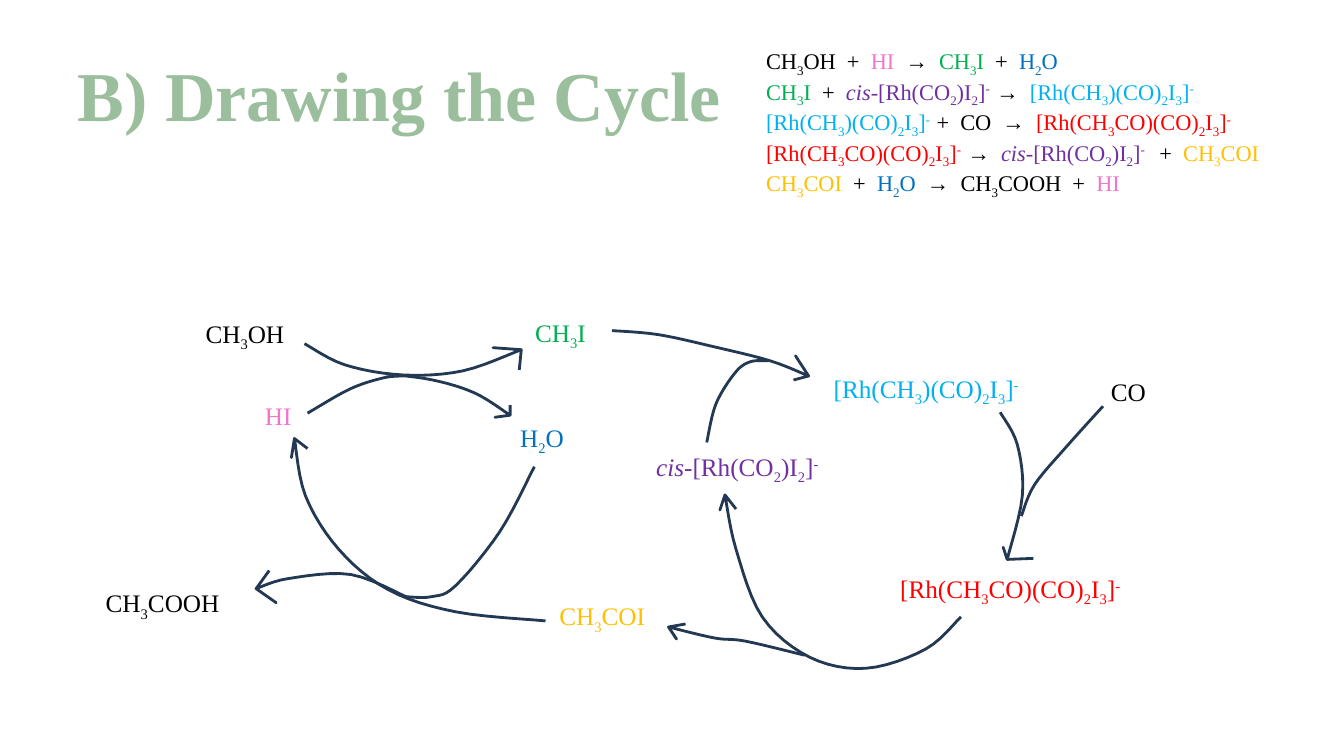
from dataclasses import dataclass

from pptx import Presentation
from pptx.dml.color import RGBColor
from pptx.enum.text import MSO_ANCHOR, MSO_AUTO_SIZE, PP_ALIGN
from pptx.util import Inches, Pt

MIDDLE = MSO_ANCHOR.MIDDLE
GROW = MSO_AUTO_SIZE.SHAPE_TO_FIT_TEXT
LEFT = PP_ALIGN.LEFT
FACE = "Times New Roman"
TITLE_ONLY = 5
PARTS = 6
COLORS = {
    "black": "000000", "pink": "F076CA", "green": "00B050", "blue": "0070C0",
    "purple": "7030A0", "sky": "00B0F0", "red": "FF0000", "gold": "FFC000",
    "sage": "9BBF9C", "navy": "233953",
}
BASES = {"_": "-25000", "^": "30000"}
Point = tuple[float, float]


@dataclass
class Species:
    color: str
    text: str


@dataclass
class Label:
    name: str
    left: float
    top: float
    width: float


@dataclass
class Stroke:
    curve: list[Point]
    barbs: tuple[Point, ...] = ()


SPECIES = {
    "CH3OH": Species("black", "CH|_3|OH"),
    "HI": Species("pink", "HI"),
    "CH3I": Species("green", "CH|_3|I"),
    "H2O": Species("blue", "H|_2|O"),
    "cis": Species("purple", "/cis|-[Rh(CO|_2|)I|_2|]|^-"),
    "methyl": Species("sky", "[Rh(CH|_3|)(CO)|_2|I|_3|]|^-"),
    "acyl": Species("red", "[Rh(CH|_3|CO)(CO)|_2|I|_3|]|^-"),
    "CH3COI": Species("gold", "CH|_3|COI"),
    "CH3COOH": Species("black", "CH|_3|COOH"),
    "CO": Species("black", "CO"),
}
STEPS = [
    ["CH3OH", "  +  ", "HI", "  →  ", "CH3I", "  +  ", "H2O"],
    ["CH3I", "  +  ", "cis", "^  |→  ", "methyl"],
    ["methyl", "^  |+  ", "CO", "  →  ", "acyl"],
    ["acyl", "^  |→  ", "cis", "^ |  +  ", "CH3COI"],
    ["CH3COI", "  +  ", "H2O", "  →  ", "CH3COOH", "  +  ", "HI"],
]
LABELS = [
    Label("CH3COOH", 0.95, 5.78, 1.5),
    Label("CH3OH", 1.94, 3.11, 1.17),
    Label("HI", 2.53, 3.92, 0.73),
    Label("CH3I", 5.21, 3.1, 1.17),
    Label("H2O", 5.06, 4.14, 0.75),
    Label("cis", 6.41, 4.43, 2.5),
    Label("methyl", 8.17, 3.65, 2.18),
    Label("CO", 10.92, 3.68, 0.58),
    Label("acyl", 8.83, 5.64, 2.67),
    Label("CH3COI", 5.45, 5.91, 1.17),
]
STROKES = [
    Stroke([(3.02, 3.41), (3.42, 3.62), (3.99, 3.72), (4.59, 3.68), (5.17, 3.47)],
           ((4.89, 3.45), (5.15, 3.67))),
    Stroke([(3.05, 4.1), (3.47, 3.86), (3.8, 3.75), (4, 3.73)]),
    Stroke([(3.83, 3.71), (4.29, 3.77), (4.71, 3.9), (5.06, 4.12)],
           ((4.91, 4.14), (5.06, 4.02))),
    Stroke([(6.07, 3.28), (6.53, 3.32), (7.08, 3.44), (7.64, 3.58), (8.02, 3.73)],
           ((7.89, 3.53), (7.87, 3.77))),
    Stroke([(7.01, 4.39), (7.1, 4.01), (7.29, 3.7), (7.44, 3.59), (7.62, 3.58)]),
    Stroke([(9.92, 4.09), (10.09, 4.41), (10.14, 4.92), (9.99, 5.55)],
           ((9.95, 5.43), (10.25, 5.54))),
    Stroke([(10.94, 4.03), (10.57, 4.44), (10.26, 4.81), (10.13, 5.12)]),
    Stroke([(9.53, 6.12), (9.18, 6.44), (8.59, 6.63), (8.03, 6.52), (7.56, 6.12),
            (7.3, 5.45), (7.19, 4.91)], ((7.14, 5.06), (7.3, 5.05))),
    Stroke([(7.98, 6.5), (7.39, 6.36), (7.09, 6.33), (6.63, 6.22)],
           ((6.71, 6.34), (6.8, 6.19))),
    Stroke([(5.41, 6.16), (4.52, 6.07), (3.85, 5.85), (3.36, 5.45), (3.03, 4.92),
            (2.92, 4.35)], ((2.89, 4.54), (3.05, 4.45))),
    Stroke([(5.3, 4.63), (4.96, 5.27), (4.52, 5.81), (4.28, 5.92), (4.02, 5.92)]),
    Stroke([(4.05, 5.93), (3.48, 5.7), (2.86, 5.74), (2.54, 5.84)],
           ((2.74, 5.98), (2.67, 5.66))),
]


def paint(color: str) -> RGBColor:
    return RGBColor.from_string(COLORS[color])


def style(font, color: str, **form) -> None:
    for key, value in {"name": FACE, **form}.items():
        setattr(font, key, value)
    font.color.rgb = paint(color)


def write(para, item: Species, size: int) -> None:
    for part in item.text.split("|"):
        mark = part[0]
        run = para.add_run()
        run.text = part[1:] if mark in "_^/" else part
        style(run.font, item.color, size=Pt(size), italic=mark == "/")
        if mark in BASES:
            run._r.get_or_add_rPr().set("baseline", BASES[mark])


def add_box(slide, left: float, top: float, width: float, height: float,
            rows: list[list[str]], size: int) -> None:
    box = slide.shapes.add_textbox(
        Inches(left), Inches(top), Inches(width), Inches(height))
    frame = box.text_frame
    for key, value in {"word_wrap": True, "auto_size": GROW}.items():
        setattr(frame, key, value)
    for index, row in enumerate(rows):
        para = frame.add_paragraph() if index else frame.paragraphs[0]
        for name in row:
            write(para, SPECIES.get(name, Species("black", name)), size)


def blend(a: float, b: float, c: float, d: float, t: float) -> float:
    return b + t / 2 * (c - a + t * (2 * a - 5 * b + 4 * c - d
                                     + t * (3 * (b - c) + d - a)))


def smooth(curve: list[Point]) -> list[Point]:
    ends = [curve[0], *curve, curve[-1]]
    trail = [curve[0]]
    for four in zip(ends, ends[1:], ends[2:], ends[3:]):
        for step in range(1, PARTS + 1):
            x, y = (blend(*axis, step / PARTS) for axis in zip(*four))
            trail.append((x, y))
    return trail


def add_stroke(slide, stroke: Stroke) -> None:
    trail = smooth(stroke.curve)
    if stroke.barbs:
        one, two = stroke.barbs
        trail += [one, stroke.curve[-1], two]
    first, *rest = [(Inches(x), Inches(y)) for x, y in trail]
    pen = slide.shapes.build_freeform(*first)
    pen.add_line_segments(rest, close=False)
    shape = pen.convert_to_shape()
    shape.shadow.inherit = False
    shape.fill.background()
    shape.line.color.rgb = paint("navy")
    shape.line.width = Pt(2)


def add_title(slide) -> None:
    title = slide.shapes.title
    place = {"left": 0.67, "top": 0.3, "width": 12, "height": 1.25}
    for key, value in place.items():
        setattr(title, key, Inches(value))
    title.text_frame.text = "B) Drawing the Cycle"
    title.text_frame.vertical_anchor = MIDDLE
    para = title.text_frame.paragraphs[0]
    para.alignment = LEFT
    style(para.runs[0].font, "sage", size=Pt(50), bold=True)


def main() -> None:
    deck = Presentation()
    deck.slide_width, deck.slide_height = Inches(13.33), Inches(7.5)
    slide = deck.slides.add_slide(deck.slide_layouts[TITLE_ONLY])
    add_title(slide)
    add_box(slide, 7.5, 0.42, 5.33, 1.45, STEPS, 16)
    for label in LABELS:
        add_box(slide, label.left, label.top, label.width, 0.4, [[label.name]], 18)
    for stroke in STROKES:
        add_stroke(slide, stroke)
    deck.save("out.pptx")


if __name__ == "__main__":
    main()
